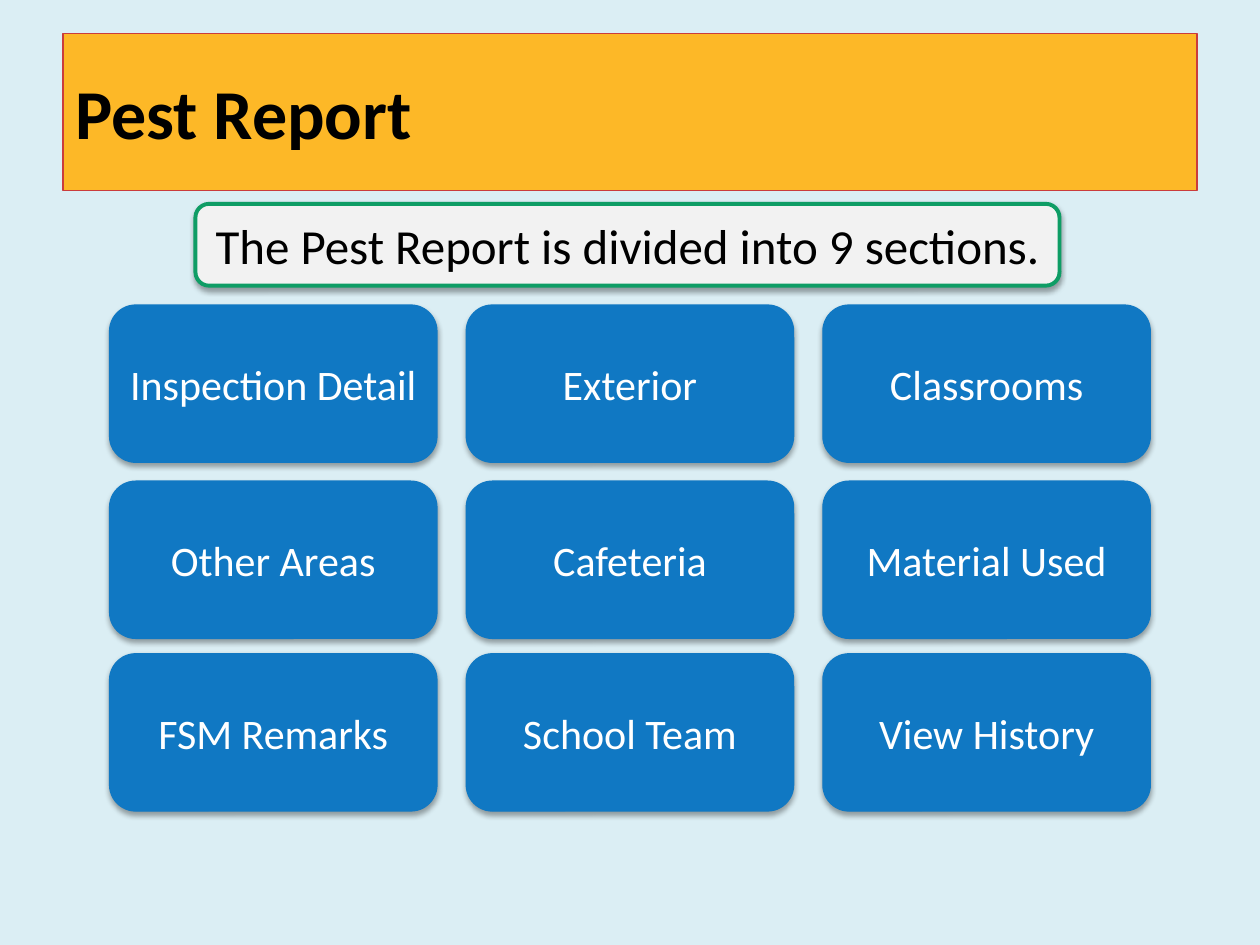
from lxml import etree
from pptx import Presentation
from pptx import util as u
from pptx.dml.color import RGBColor
from pptx.enum import shapes, text
from pptx.oxml import ns

SECTIONS = [
    ["Inspection Detail", "Exterior", "Classrooms"],
    ["Other Areas", "Cafeteria", "Material Used"],
    ["FSM Remarks", "School Team", "View History"],
]
ROW_TOPS = [6.15, 9.7, 13.18]
FIRST_LEFT, COLUMN_STEP = 2.21, 7.19
TILE_WIDTH, TILE_HEIGHT = 6.6, 3.17


def colour(hex_value):
    return RGBColor.from_string(hex_value)


def write(shape, content, size, color="000000", bold=False,
          align=text.PP_ALIGN.CENTER, font="Calibri"):
    frame = shape.text_frame
    frame.word_wrap = True
    frame.vertical_anchor = text.MSO_ANCHOR.MIDDLE
    paragraph = frame.paragraphs[0]
    paragraph.alignment = align
    run = paragraph.add_run()
    run.text = content
    run.font.name = font
    run.font.size = u.Pt(size)
    run.font.bold = bold
    run.font.color.rgb = colour(color)


def add_soft_shadow(shape):
    """Give the shape a faint shadow that falls straight down."""
    effects = shape._element.spPr.find(ns.qn("a:effectLst"))
    shadow = etree.SubElement(
        effects, ns.qn("a:outerShdw"), blurRad=str(u.Pt(3.1)),
        dist=str(u.Pt(1.8)), dir="5400000", rotWithShape="0")
    black = etree.SubElement(shadow, ns.qn("a:srgbClr"), val="000000")
    etree.SubElement(black, ns.qn("a:alpha"), val="35000")


class Deck:
    """Holds the palette and the current slide."""

    background, banner_fill, banner_line = "DBEEF4", "FDB827", "CA3C3C"
    tile_fill, note_fill, note_line = "1078C3", "F2F2F2", "0E9D65"

    def __init__(self, presentation):
        self.slide = presentation.slides.add_slide(
            presentation.slide_layouts[6])
        fill = self.slide.background.fill
        fill.solid()
        fill.fore_color.rgb = colour(self.background)

    def box(self, kind, bounds, fill, line, line_width=0.75):
        shape = self.slide.shapes.add_shape(kind, *map(u.Cm, bounds))
        shape.shadow.inherit = False
        shape.fill.solid()
        shape.fill.fore_color.rgb = colour(fill)
        shape.line.color.rgb = colour(line)
        shape.line.width = u.Pt(line_width)
        return shape

    def rounded(self, *args, **kwargs):
        shape = self.box(shapes.MSO_SHAPE.ROUNDED_RECTANGLE, *args, **kwargs)
        add_soft_shadow(shape)
        return shape

    def banner(self, content):
        banner = self.box(shapes.MSO_SHAPE.RECTANGLE,
                          (1.27, 0.67, 22.86, 3.17),
                          self.banner_fill, self.banner_line)
        write(banner, content, 40, bold=True, align=text.PP_ALIGN.LEFT)

    def tile(self, content, left, top):
        tile = self.rounded((left, top, TILE_WIDTH, TILE_HEIGHT),
                            self.tile_fill, self.tile_fill)
        write(tile, content, 24, color="FFFFFF")

    def note(self, content):
        note = self.rounded((3.94, 4.11, 17.42, 1.65), self.note_fill,
                            self.note_line, line_width=2.25)
        write(note, content, 28)


def main():
    presentation = Presentation()
    presentation.slide_width = u.Cm(25.4)
    presentation.slide_height = u.Cm(19.05)
    deck = Deck(presentation)
    deck.banner("Pest Report")
    for top, row in zip(ROW_TOPS, SECTIONS):
        for column, section in enumerate(row):
            deck.tile(section, FIRST_LEFT + column * COLUMN_STEP, top)
    deck.note("The Pest Report is divided into 9 sections.")
    presentation.save("out.pptx")


if __name__ == "__main__":
    main()
